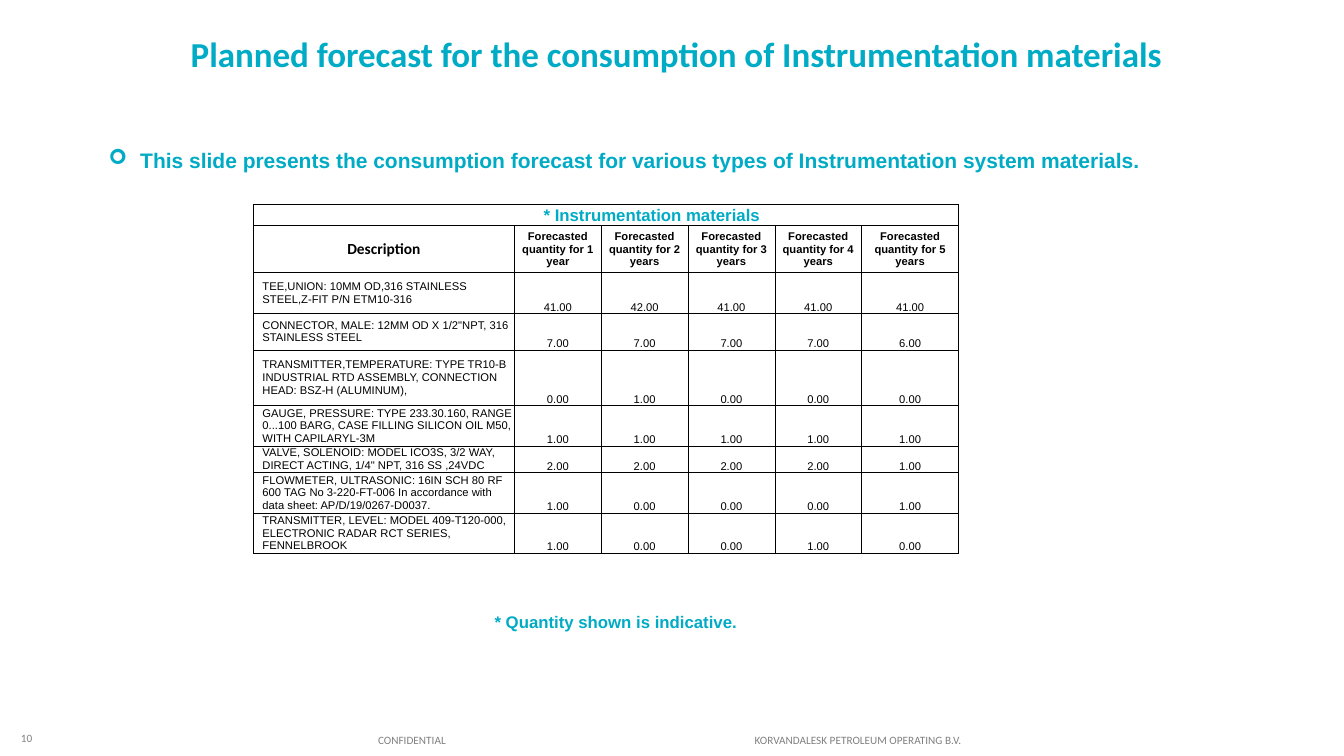
"""Build the slide with the forecast consumption of instrumentation materials."""

from dataclasses import dataclass

from lxml.etree import SubElement
from pptx import Presentation
from pptx.dml.color import RGBColor
from pptx.enum.text import MSO_ANCHOR, PP_ALIGN
from pptx.oxml import parse_xml
from pptx.oxml.ns import nsdecls, qn
from pptx.slide import Slide
from pptx.table import Table, _Cell
from pptx.text.text import TextFrame
from pptx.util import Pt

TEAL = RGBColor(0x00, 0xAB, 0xC5)
GRAY = RGBColor(0x80, 0x80, 0x80)
BLACK = RGBColor(0x00, 0x00, 0x00)

COLUMN_WIDTHS = (186.5, 62, 62, 62, 62, 60)
HEADER_HEIGHTS = (15, 33.8)
HEADINGS = ("Description",) + tuple(
    f"Forecasted quantity for {year} year{'s' if year > 1 else ''}" for year in range(1, 6)
)


@dataclass(frozen=True)
class Label:
    text: str
    left: float
    top: float
    width: float
    height: float
    size: float
    font: str = "Calibri"
    color: RGBColor = TEAL
    bold: bool = False
    align: PP_ALIGN = PP_ALIGN.CENTER
    anchor: MSO_ANCHOR = MSO_ANCHOR.TOP
    bullet: str = ""


@dataclass(frozen=True)
class Material:
    description: str
    quantities: tuple[int, ...]
    height: float


LABELS = (
    Label("10", 0.7, 514, 29.5, 26, 8, color=GRAY, align=PP_ALIGN.RIGHT, anchor=MSO_ANCHOR.MIDDLE),
    Label("Planned forecast for the consumption of Instrumentation materials",
          3, 19.5, 960, 44.6, 25, bold=True),
    Label("CONFIDENTIAL", 244.3, 520.5, 100, 20, 8, color=GRAY),
    Label("KORVANDALESK PETROLEUM OPERATING B.V.", 513, 520.5, 200, 20, 8, color=GRAY),
    Label("This slide presents the consumption forecast for various types of "
          "Instrumentation system materials.",
          70.6, 101.5, 828, 25.2, 15, "Arial", bold=True, align=PP_ALIGN.LEFT, bullet="➢"),
    Label("* Quantity shown is indicative.", 52.6, 433.4, 774.7, 21.6, 12, "Arial", bold=True),
)

MATERIALS = (
    Material("TEE,UNION: 10MM OD,316 STAINLESS STEEL,Z-FIT P/N ETM10-316",
             (41, 42, 41, 41, 41), 29.3),
    Material('CONNECTOR, MALE: 12MM OD X 1/2"NPT, 316 STAINLESS STEEL', (7, 7, 7, 7, 6), 26),
    Material("TRANSMITTER,TEMPERATURE: TYPE TR10-B INDUSTRIAL RTD ASSEMBLY, "
             "CONNECTION HEAD: BSZ-H (ALUMINUM),", (0, 1, 0, 0, 0), 39.8),
    Material("GAUGE, PRESSURE: TYPE 233.30.160, RANGE 0...100 BARG, "
             "CASE FILLING SILICON OIL M50, WITH CAPILARYL-3M", (1, 1, 1, 1, 1), 28.6),
    Material('VALVE, SOLENOID: MODEL ICO3S, 3/2 WAY, DIRECT ACTING, 1/4" NPT, 316 SS ,24VDC',
             (2, 2, 2, 2, 1), 19.2),
    Material("FLOWMETER, ULTRASONIC: 16IN SCH 80 RF 600 TAG No 3-220-FT-006 "
             "In accordance with data sheet: AP/D/19/0267-D0037.", (1, 0, 0, 0, 1), 28.6),
    Material("TRANSMITTER, LEVEL: MODEL 409-T120-000, ELECTRONIC RADAR RCT SERIES, FENNELBROOK",
             (1, 0, 0, 1, 0), 28.6),
)


def write_text(frame: TextFrame, text: str, *, size: float, font: str = "Arial",
               color: RGBColor = BLACK, bold: bool = False,
               align: PP_ALIGN = PP_ALIGN.CENTER, bullet: str = "") -> None:
    """Write one formatted paragraph into a text frame."""
    frame.word_wrap = True
    paragraph = frame.paragraphs[0]
    paragraph.alignment = align
    if bullet:
        properties = paragraph._p.get_or_add_pPr()
        properties.set("marL", str(Pt(22.5)))
        properties.set("indent", str(-Pt(22.5)))
        SubElement(properties, qn("a:buFont")).set("typeface", "Wingdings")
        SubElement(properties, qn("a:buChar")).set("char", bullet)
    run = paragraph.add_run()
    run.text = text
    run.font.size = Pt(size)
    run.font.name = font
    run.font.bold = bold
    run.font.color.rgb = color


def add_label(slide: Slide, label: Label) -> None:
    """Add one text box."""
    shape = slide.shapes.add_textbox(
        Pt(label.left), Pt(label.top), Pt(label.width), Pt(label.height))
    shape.text_frame.vertical_anchor = label.anchor
    write_text(shape.text_frame, label.text, size=label.size, font=label.font, color=label.color,
               bold=label.bold, align=label.align, bullet=label.bullet)


def style_cell(cell: _Cell) -> None:
    """Clear the fill of a cell and give it thin black borders."""
    cell.fill.background()
    properties = cell._tc.get_or_add_tcPr()
    for position, side in enumerate(("lnL", "lnR", "lnT", "lnB")):
        properties.insert(position, parse_xml(
            f'<a:{side} {nsdecls("a")} w="{Pt(0.5)}"><a:solidFill>'
            f'<a:srgbClr val="{BLACK}"/></a:solidFill></a:{side}>'))


def fill_cell(cell: _Cell, text: str, *, left_margin: float = 0.5, top_margin: float = 0.5,
              anchor: MSO_ANCHOR = MSO_ANCHOR.MIDDLE, size: float = 8, font: str = "Arial",
              color: RGBColor = BLACK, bold: bool = False,
              align: PP_ALIGN = PP_ALIGN.CENTER) -> None:
    """Set the margins and the text of a cell."""
    cell.margin_left, cell.margin_right = Pt(left_margin), Pt(0.5)
    cell.margin_top, cell.margin_bottom = Pt(top_margin), Pt(0)
    cell.vertical_anchor = anchor
    write_text(cell.text_frame, text, size=size, font=font, color=color, bold=bold, align=align)


def add_forecast_table(slide: Slide) -> Table:
    """Add the table of forecast quantities."""
    heights = HEADER_HEIGHTS + tuple(material.height for material in MATERIALS)
    table = slide.shapes.add_table(
        len(heights), len(COLUMN_WIDTHS), Pt(181), Pt(145.8),
        Pt(sum(COLUMN_WIDTHS)), Pt(sum(heights))).table
    table.first_row = table.horz_banding = False
    for column, width in zip(table.columns, COLUMN_WIDTHS):
        column.width = Pt(width)
    for row, height in zip(table.rows, heights):
        row.height = Pt(height)
    for cell in table.iter_cells():
        style_cell(cell)

    table.cell(0, 0).merge(table.cell(0, len(COLUMN_WIDTHS) - 1))
    fill_cell(table.cell(0, 0), "* Instrumentation materials", left_margin=66,
              anchor=MSO_ANCHOR.BOTTOM, size=12, color=TEAL, bold=True)
    for index, heading in enumerate(HEADINGS):
        size, font = (8, "Arial") if index else (11, "Calibri")
        fill_cell(table.cell(1, index), heading, size=size, font=font, bold=True)
    for row_index, material in enumerate(MATERIALS, start=len(HEADER_HEIGHTS)):
        fill_cell(table.cell(row_index, 0), material.description,
                  left_margin=6.5, top_margin=0, align=PP_ALIGN.LEFT)
        for index, quantity in enumerate(material.quantities, start=1):
            fill_cell(table.cell(row_index, index), f"{quantity:.2f}", anchor=MSO_ANCHOR.BOTTOM)
    return table


def main() -> None:
    """Build and save the presentation."""
    presentation = Presentation()
    presentation.slide_width, presentation.slide_height = Pt(960), Pt(540)
    slide = presentation.slides.add_slide(presentation.slide_layouts[6])
    for label in LABELS:
        add_label(slide, label)
    add_forecast_table(slide)
    presentation.save("out.pptx")


if __name__ == "__main__":
    main()
